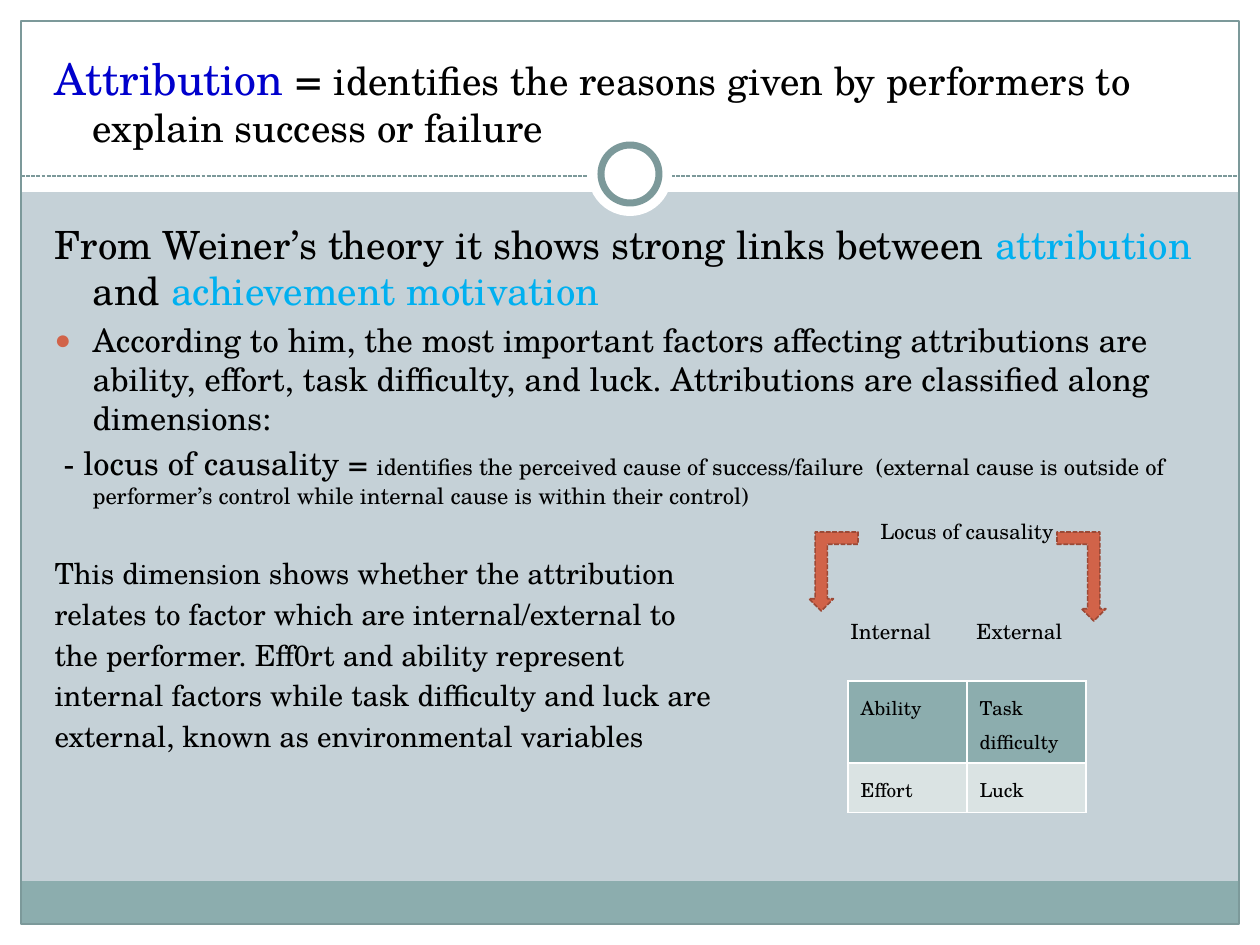
from lxml import etree
from pptx import Presentation
from pptx.dml.color import RGBColor
from pptx.enum.dml import MSO_LINE
from pptx.enum.shapes import MSO_CONNECTOR, MSO_SHAPE
from pptx.enum.text import MSO_ANCHOR, MSO_AUTO_SIZE, PP_ALIGN
from pptx.oxml.ns import qn
from pptx.util import Emu, Pt

RECT, OVAL, BENT_ARROW = MSO_SHAPE.RECTANGLE, MSO_SHAPE.OVAL, MSO_SHAPE.BENT_UP_ARROW
STRAIGHT, DASH = MSO_CONNECTOR.STRAIGHT, MSO_LINE.SQUARE_DOT
TOP, LEFT, CENTER, NO_FIT = MSO_ANCHOR.TOP, PP_ALIGN.LEFT, PP_ALIGN.CENTER, MSO_AUTO_SIZE.NONE

COLORS = {
    "background": "C5D1D7", "white": "FFFFFF", "band": "8CADAE", "rule": "7C999A",
    "pale": "DAE3E3", "text": "000000", "term": "0000CC", "highlight": "00B0F0",
    "accent": "D16349", "accent_edge": "9B4936",
}
FONT = "TeX Gyre Schola"
EMU_PER_PX = 914400 / 126
WIDTH, HEIGHT, MARGIN = 1260, 945, 21
INDENT = 38
HEADING, POINT, DETAIL, NOTE = 22.2, 18.5, 16.6, 12.9


def px(length):
    return Emu(round(length * EMU_PER_PX))


def color(name):
    return RGBColor.from_string(COLORS[name])


def child(parent, tag, **attributes):
    return etree.SubElement(parent, qn(tag), attributes)


class SlideBuilder:
    def __init__(self, slide):
        self.slide = slide
        self.shapes = slide.shapes
        fill = slide.background.fill
        fill.solid()
        fill.fore_color.rgb = color("background")

    def shape(self, kind, box, fill=None, line=None, width=0.75, dash=None):
        shape = self.shapes.add_shape(kind, *map(px, box))
        shape.shadow.inherit = False
        if fill:
            shape.fill.solid()
            shape.fill.fore_color.rgb = color(fill)
        else:
            shape.fill.background()
        if line:
            self.outline(shape.line, line, width, dash)
        else:
            shape.line.fill.background()
        return shape

    def outline(self, line, name, width, dash):
        line.color.rgb = color(name)
        line.width = Pt(width)
        if dash:
            line.dash_style = dash

    def rule(self, start, end, name, width, dash):
        connector = self.shapes.add_connector(STRAIGHT, *map(px, start + end))
        self.outline(connector.line, name, width, dash)
        child(connector._element.spPr, "a:effectLst")

    def bent_arrow(self, box, mirrored=False):
        arrow = self.shape(BENT_ARROW, box, "accent", "accent_edge", 0.9, DASH)
        arrow.rotation = 180
        if mirrored:
            arrow._element.spPr.find(qn("a:xfrm")).set("flipH", "1")

    def runs(self, paragraph, runs):
        """Add (text, size, colour name) runs."""
        for text, size, name in runs:
            run = paragraph.add_run()
            run.text = text
            run.font.name = FONT
            run.font.size = Pt(size)
            run.font.color.rgb = color(name)

    def placeholder(self, holder, box, paragraphs):
        """Fill with (space before, bulleted, runs) paragraphs, in front of the decoration."""
        self.shapes._spTree.append(holder._element)
        holder.left, holder.top, holder.width, holder.height = map(px, box)
        frame = holder.text_frame
        frame.auto_size, frame.vertical_anchor, frame.word_wrap = NO_FIT, TOP, True
        for index, (space, bulleted, runs) in enumerate(paragraphs):
            paragraph = frame.add_paragraph() if index else frame.paragraphs[0]
            paragraph.alignment = LEFT
            paragraph.space_before = Pt(space)
            properties = paragraph._p.get_or_add_pPr()
            properties.set("marL", str(px(INDENT)))
            properties.set("indent", str(px(-INDENT)))
            if bulleted:
                child(child(properties, "a:buClr"), "a:srgbClr", val=COLORS["accent"])
                child(properties, "a:buSzPct", val="85000")
                child(properties, "a:buChar", char="●")
            else:
                child(properties, "a:buNone")
            self.runs(paragraph, runs)

    def label(self, box, lines):
        """Add a text box of (alignment, space before, text) lines."""
        frame = self.shapes.add_textbox(*map(px, box)).text_frame
        frame.word_wrap = True
        for index, (alignment, space, text) in enumerate(lines):
            paragraph = frame.add_paragraph() if index else frame.paragraphs[0]
            paragraph.alignment = alignment
            paragraph.space_before = Pt(space)
            self.runs(paragraph, [(text, 12, "text")])

    def table(self, box, row_heights, rows, row_fills):
        table = self.shapes.add_table(len(rows), len(rows[0]), *map(px, box)).table
        for row, height in zip(table.rows, row_heights):
            row.height = px(height)
        for r, texts in enumerate(rows):
            for c, text in enumerate(texts):
                cell = table.cell(r, c)
                self.cell_borders(cell)
                cell.fill.solid()
                cell.fill.fore_color.rgb = color(row_fills[r])
                paragraph = cell.text_frame.paragraphs[0]
                paragraph.line_spacing = 1.22
                self.runs(paragraph, [(text, 11, "text")])

    def cell_borders(self, cell):
        properties = cell._tc.get_or_add_tcPr()
        for side in ("a:lnL", "a:lnR", "a:lnT", "a:lnB"):
            line = child(properties, side, w=str(Pt(1)))
            child(child(line, "a:solidFill"), "a:srgbClr", val=COLORS["white"])


def main():
    deck = Presentation()
    deck.slide_width, deck.slide_height = px(WIDTH), px(HEIGHT)
    builder = SlideBuilder(deck.slides.add_slide(deck.slide_layouts[1]))
    title, body = builder.slide.placeholders

    inner_width = WIDTH - 2 * MARGIN
    for box in (
        (0, HEIGHT - MARGIN, WIDTH, MARGIN),
        (0, 0, WIDTH, 192),
        (0, 0, MARGIN, HEIGHT),
        (WIDTH - MARGIN, 0, MARGIN, HEIGHT),
    ):
        builder.shape(RECT, box, "white")
    builder.shape(RECT, (MARGIN, 881, inner_width, 43), "band")
    builder.shape(RECT, (MARGIN, MARGIN, inner_width, HEIGHT - 2 * MARGIN), line="rule")
    builder.rule((MARGIN, 176), (WIDTH - MARGIN, 176), "rule", 0.75, DASH)
    builder.shape(OVAL, (588, 132, 84, 84), "white")
    builder.shape(OVAL, (601, 145, 58, 58), "white", "rule", 4)

    builder.placeholder(title, (42, 45, 1172, 122), [(0, False, [
        ("Attribution", 25, "term"),
        (" = ", 25, "text"),
        ("identifies the reasons given by performers to explain success or failure",
         HEADING, "text"),
    ])])

    dimension_lines = (
        "This dimension shows whether the attribution",
        "relates to factor which are internal/external to",
        "the performer. Eff0rt and ability represent",
        "internal factors while task difficulty and luck are",
        "external, known as environmental variables",
    )
    builder.placeholder(body, (42, 214, 1172, 627), [
        (0, False, [
            ("From Weiner’s theory it shows strong links between ", HEADING, "text"),
            ("attribution", HEADING, "highlight"),
            (" and ", HEADING, "text"),
            ("achievement motivation", HEADING, "highlight"),
        ]),
        (3.7, True, [
            ("According to him, the most important factors affecting attributions are "
             "ability, effort, task difficulty, and luck. Attributions are classified "
             "along dimensions:", POINT, "text"),
        ]),
        (3.7, False, [
            (" - locus of causality = ", POINT, "text"),
            ("identifies the perceived cause of success/failure  (external cause is "
             "outside of performer’s control while internal cause is within their "
             "control)", NOTE, "text"),
        ]),
    ] + [
        (3.3 if index else 26.6, False, [(line, DETAIL, "text")])
        for index, line in enumerate(dimension_lines)
    ])

    builder.table((848, 681, 238, 119), (69, 50),
                  [("Ability", "Task difficulty"), ("Effort", "Luck")], ("band", "pale"))
    builder.label((838, 512, 258, 140), [
        (CENTER, 0, "Locus of causality"),
        (LEFT, 43.2, "Internal\tExternal"),
    ])
    builder.bent_arrow((809, 532, 49, 79))
    builder.bent_arrow((1057, 532, 49, 89), mirrored=True)

    deck.save("out.pptx")


if __name__ == "__main__":
    main()
